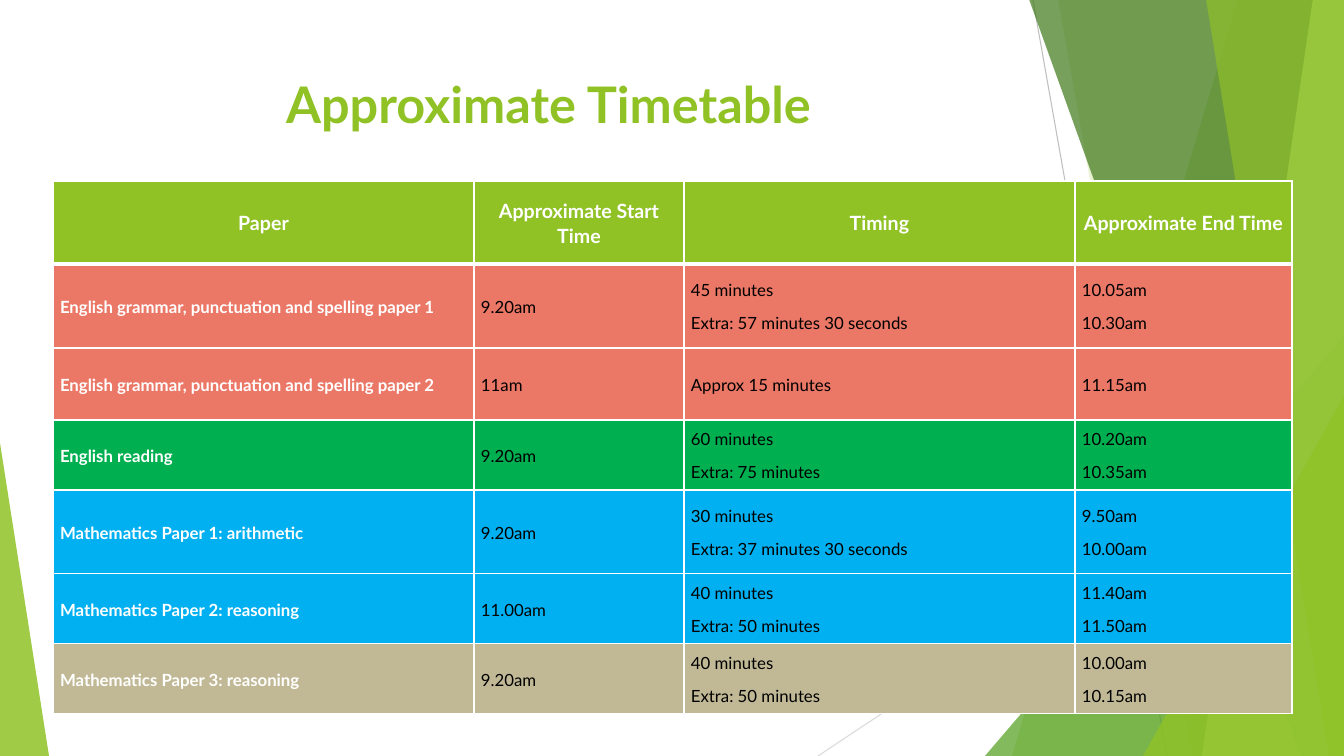
from pptx import Presentation
from pptx import util as u
from pptx.dml.color import RGBColor
from pptx.enum import shapes, text
from pptx.oxml import parse_xml
from pptx.oxml.ns import nsdecls

WIDTH, HEIGHT = 1344, 756
SCALE = 12192000 / WIDTH
GREEN, WHITE, BLACK = "90C226", "FFFFFF", "000000"
CORAL, EMERALD, BLUE, SAND = "EB7766", "00B050", "00B0F0", "C1B995"
CENTER, LEFT = text.PP_ALIGN.CENTER, text.PP_ALIGN.LEFT


def px(length):
    return u.Emu(round(length * SCALE))


def color(value):
    return RGBColor.from_string(value)


class SlideBuilder:
    font = "Lato"

    def __init__(self, slide):
        self.slide = slide

    def paint(self, shape, fill, opacity):
        shape.shadow.inherit = False
        shape.fill.solid()
        shape.fill.fore_color.rgb = color(fill)
        shape.line.fill.background()
        rgb = shape._element.spPr.find("{*}solidFill/{*}srgbClr")
        rgb.append(parse_xml(f'<a:alpha {nsdecls("a")} val="{opacity * 1000}"/>'))

    def line(self, start, end, stroke):
        connector = self.slide.shapes.add_connector(
            shapes.MSO_CONNECTOR.STRAIGHT, *map(px, start + end))
        connector.line.color.rgb = color(stroke)
        connector.line.width = u.Pt(0.75)
        properties = connector._element.spPr
        properties.append(parse_xml(f'<a:effectLst {nsdecls("a")}/>'))

    def strip(self, top_x, bottom_x, fill, opacity):
        """Full-height band whose right side is the slide edge."""
        builder = self.slide.shapes.build_freeform(top_x, -1, scale=SCALE)
        builder.add_line_segments([(WIDTH, -1), (WIDTH, HEIGHT), (bottom_x, HEIGHT)])
        self.paint(builder.convert_to_shape(), fill, opacity)

    def triangle(self, left, top, width, tip, fill, opacity):
        """Triangle standing on the bottom edge of the slide."""
        shape = self.slide.shapes.add_shape(
            shapes.MSO_SHAPE.ISOSCELES_TRIANGLE,
            px(left), px(top), px(width), px(HEIGHT - top))
        shape.adjustments[0] = tip
        self.paint(shape, fill, opacity)

    def add_words(self, paragraph, words, size, ink, bold, align):
        paragraph.alignment = align
        run = paragraph.add_run()
        run.text = words
        run.font.name = self.font
        run.font.size = u.Pt(size)
        run.font.bold = bold
        run.font.color.rgb = color(ink)

    def title(self, words, left, top, width, height):
        frame = self.slide.shapes.add_textbox(*map(px, (left, top, width, height))).text_frame
        frame.word_wrap = True
        frame.vertical_anchor = text.MSO_ANCHOR.TOP
        self.add_words(frame.paragraphs[0], words, 36, GREEN, True, CENTER)

    def borders(self, cell, top, bottom):
        properties = cell._tc.get_or_add_tcPr()
        for side, points in (("L", 1), ("R", 1), ("T", top), ("B", bottom)):
            properties.append(parse_xml(
                f'<a:ln{side} {nsdecls("a")} w="{int(u.Pt(points))}"><a:solidFill>'
                f'<a:srgbClr val="{WHITE}"/></a:solidFill></a:ln{side}>'))

    def cell(self, cell, lines, fill, size, ink, bold, align):
        cell.fill.solid()
        cell.fill.fore_color.rgb = color(fill)
        cell.vertical_anchor = text.MSO_ANCHOR.MIDDLE
        cell.margin_left = cell.margin_right = px(7)
        cell.margin_top = cell.margin_bottom = 0
        frame = cell.text_frame
        for index, words in enumerate(lines):
            paragraph = frame.add_paragraph() if index else frame.paragraphs[0]
            paragraph.line_spacing = 1.07
            paragraph.space_after = u.Pt(8)
            self.add_words(paragraph, words, size, ink, bold, align)

    def table(self, left, top, widths, heights, header, rows):
        table = self.slide.shapes.add_table(
            len(heights), len(widths), px(left), px(top),
            px(sum(widths)), px(sum(heights))).table
        table.horz_banding = False
        for column, width in zip(table.columns, widths):
            column.width = px(width)
        for row, height in zip(table.rows, heights):
            row.height = px(height)
        for r, (fill, *entries) in enumerate([(GREEN, *header), *rows]):
            for c, entry in enumerate(entries):
                cell = table.cell(r, c)
                self.borders(cell, 3 if r == 1 else 1, 3 if r == 0 else 1)
                strong = r == 0 or c == 0
                self.cell(cell, entry.split("\n"), fill, 12 if r else 14,
                          WHITE if strong else BLACK, strong, LEFT if r else CENTER)


HEADER = ("Paper", "Approximate Start Time", "Timing", "Approximate End Time")
PAPERS = [
    (CORAL, "English grammar, punctuation and spelling paper 1", "9.20am",
     "45 minutes\nExtra: 57 minutes 30 seconds", "10.05am\n10.30am"),
    (CORAL, "English grammar, punctuation and spelling paper 2", "11am",
     "Approx 15 minutes", "11.15am"),
    (EMERALD, "English reading", "9.20am",
     "60 minutes\nExtra: 75 minutes", "10.20am\n10.35am"),
    (BLUE, "Mathematics Paper 1: arithmetic", "9.20am",
     "30 minutes\nExtra: 37 minutes 30 seconds", "9.50am\n10.00am"),
    (BLUE, "Mathematics Paper 2: reasoning", "11.00am",
     "40 minutes\nExtra: 50 minutes", "11.40am\n11.50am"),
    (SAND, "Mathematics Paper 3: reasoning", "9.20am",
     "40 minutes\nExtra: 50 minutes", "10.00am\n10.15am"),
]


def main():
    presentation = Presentation()
    presentation.slide_width, presentation.slide_height = px(WIDTH), px(HEIGHT)
    builder = SlideBuilder(presentation.slides.add_slide(presentation.slide_layouts[6]))

    # Green facets, back to front
    builder.line((1033, 0), (1167, HEIGHT), "BFBFBF")
    builder.line((WIDTH, 406), (818, HEIGHT), "D9D9D9")
    builder.strip(1238, 1012, GREEN, 30)
    builder.strip(1058, 1192, GREEN, 20)
    builder.triangle(985, 336, 359, 1, "54A021", 72)
    builder.strip(1029, 1301, "3F7819", 70)
    builder.strip(1313, 1202, "C0E474", 70)
    builder.strip(1206, 1329, GREEN, 65)
    builder.triangle(1143, 396, 201, 1, GREEN, 80)
    builder.triangle(0, 443, 49, 0, GREEN, 85)

    # Title
    builder.title("Approximate Timetable", 75, 68, 947, 145)

    # Timetable
    builder.table(53, 181, (421, 210, 391, 217), (83, 84, 72, 70, 84, 70, 70),
                  HEADER, PAPERS)

    presentation.save("out.pptx")


if __name__ == "__main__":
    main()
